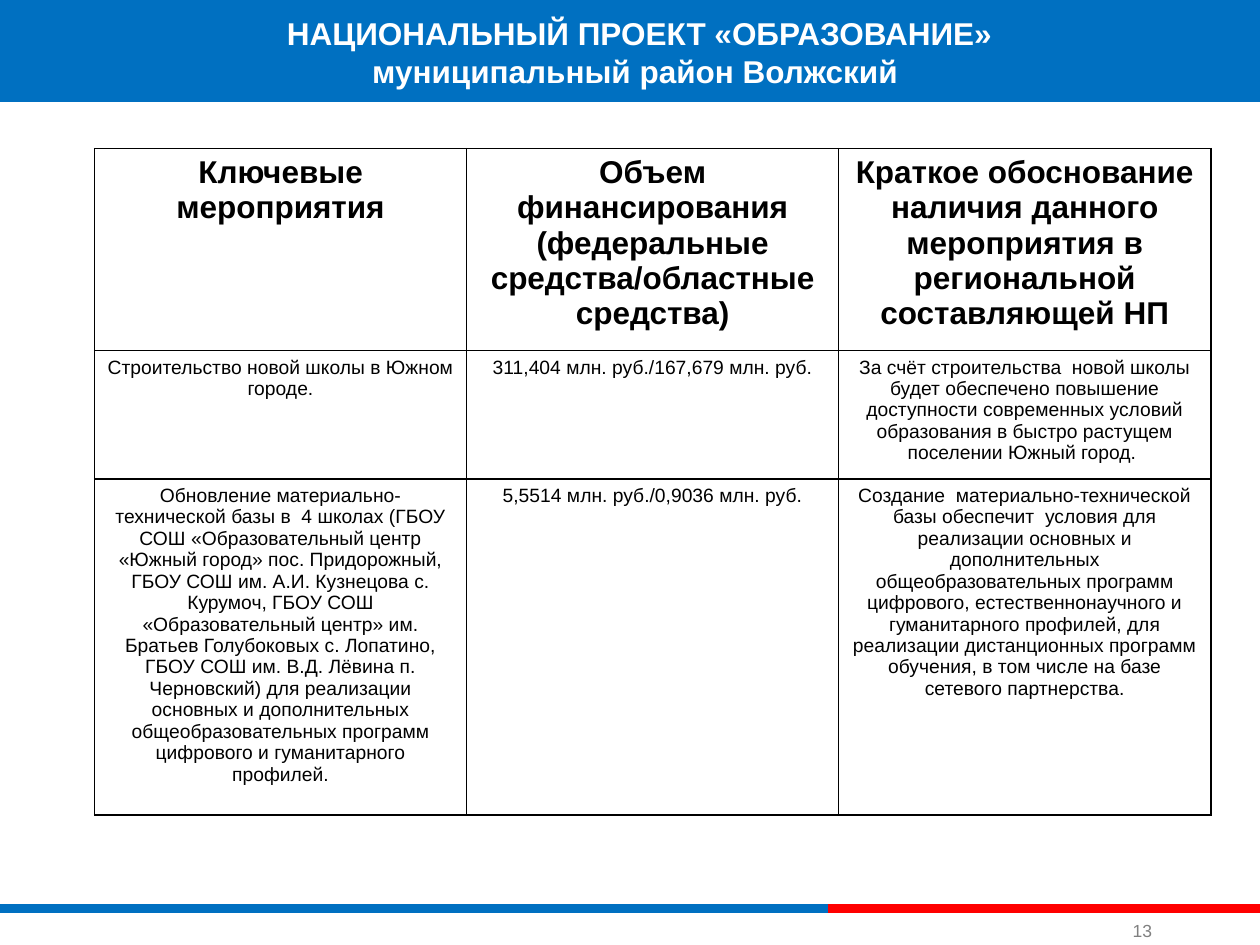
from pptx import Presentation, util as u
from pptx.dml.color import RGBColor
from pptx.enum import shapes, text
from pptx.oxml.ns import qn
from lxml import etree

HUE = {"blue": "0070C1", "red": "FF0000", "white": "FFFFFF",
       "black": "000000", "gray": "808080"}
TITLE = ["НАЦИОНАЛЬНЫЙ ПРОЕКТ «ОБРАЗОВАНИЕ»", "муниципальный район Волжский "]
PAGE = "13"
ROWS = [
    ["Ключевые мероприятия",
     "Объем финансирования (федеральные средства/областные средства)",
     "Краткое обоснование наличия данного мероприятия в региональной составляющей НП"],
    ["Строительство новой школы в Южном городе.",
     "311,404 млн. руб./167,679 млн. руб.",
     "За счёт строительства  новой школы будет обеспечено повышение доступности "
     "современных условий образования в быстро растущем поселении Южный город. "],
    ["Обновление материально-технической базы в  4 школах (ГБОУ СОШ «Образовательный "
     "центр «Южный город» пос. Придорожный, ГБОУ СОШ им. А.И. Кузнецова с. Курумоч, "
     "ГБОУ СОШ «Образовательный центр» им. Братьев Голубоковых с. Лопатино, ГБОУ СОШ "
     "им. В.Д. Лёвина п. Черновский) для реализации основных и дополнительных "
     "общеобразовательных программ цифрового и гуманитарного профилей.",
     "5,5514 млн. руб./0,9036 млн. руб.",
     "Создание  материально-технической базы обеспечит  условия для реализации основных "
     "и дополнительных общеобразовательных программ цифрового, естественнонаучного и "
     "гуманитарного профилей, для реализации дистанционных программ обучения, в том "
     "числе на базе сетевого партнерства."],
]
HEIGHTS = [1.6, 1.02, 2.67]
WIDTH = 8.86
STRIPES = [(0, 6.57, "blue"), (6.57, 10, "red")]
HEAD = {"size": u.Pt(18), "bold": True}
BODY = {"size": u.Pt(11), "bold": False}
MID = text.PP_ALIGN.CENTER


def rgb(hue):
    return RGBColor.from_string(HUE[hue])


def box(*at):
    return [u.Inches(n) for n in at]


def write(frame, lines, hue, form, align):
    frame.text = "\n".join(lines)
    for par in frame.paragraphs:
        par.alignment = align
        for run in par.runs:
            run.font.name = "Arial"
            run.font.color.rgb = rgb(hue)
            for key, val in form.items():
                setattr(run.font, key, val)


def label(at, lines, hue, form, align, anchor, wrap):
    frame = slide.shapes.add_textbox(*box(*at)).text_frame
    write(frame, lines, hue, form, align)
    frame.word_wrap = wrap
    frame.vertical_anchor = anchor
    for side in ("left", "right", "top", "bottom"):
        setattr(frame, "margin_" + side, u.Inches(0.05))


def border(cell):
    props = cell._tc.get_or_add_tcPr()
    for spot, side in enumerate(("lnL", "lnR", "lnT", "lnB")):
        line = etree.Element(qn("a:" + side), w=str(u.Pt(1)))
        fill = etree.SubElement(line, qn("a:solidFill"))
        etree.SubElement(fill, qn("a:srgbClr"), val=HUE["black"])
        props.insert(spot, line)


deck = Presentation()
deck.slide_width, deck.slide_height = box(10, 7.5)
slide = deck.slides.add_slide(deck.slide_layouts[6])

for start, end, hue in STRIPES:
    line = slide.shapes.add_connector(
        shapes.MSO_CONNECTOR.STRAIGHT, *box(start, 7.21, end, 7.21))
    line.line.color.rgb = rgb(hue)
    line.line.width = u.Pt(5)
    etree.SubElement(line._element.spPr, qn("a:effectLst"))

band = slide.shapes.add_shape(shapes.MSO_SHAPE.RECTANGLE, *box(0, -0.03, 10, 0.84))
band.shadow.inherit = False
band.fill.solid()
band.fill.fore_color.rgb = rgb("blue")
band.line.fill.background()

label((8.94, 7.27, 0.3, 0.25), [PAGE], "gray", {"size": u.Pt(10)},
      text.PP_ALIGN.LEFT, text.MSO_ANCHOR.BOTTOM, True)
label((2.18, 0.06, 5.79, 0.71), TITLE, "white", HEAD, MID, text.MSO_ANCHOR.TOP, False)

table = slide.shapes.add_table(
    len(ROWS), len(ROWS[0]), *box(0.75, 1.18, WIDTH, sum(HEIGHTS))).table
table.first_row = table.horz_banding = False
for col in table.columns:
    col.width = u.Inches(WIDTH / len(ROWS[0]))
for r, (row, high) in enumerate(zip(ROWS, HEIGHTS)):
    table.rows[r].height = u.Inches(high)
    for c, words in enumerate(row):
        cell = table.cell(r, c)
        write(cell.text_frame, [words], "black", BODY if r else HEAD, MID)
        cell.fill.background()
        border(cell)

deck.save("out.pptx")
